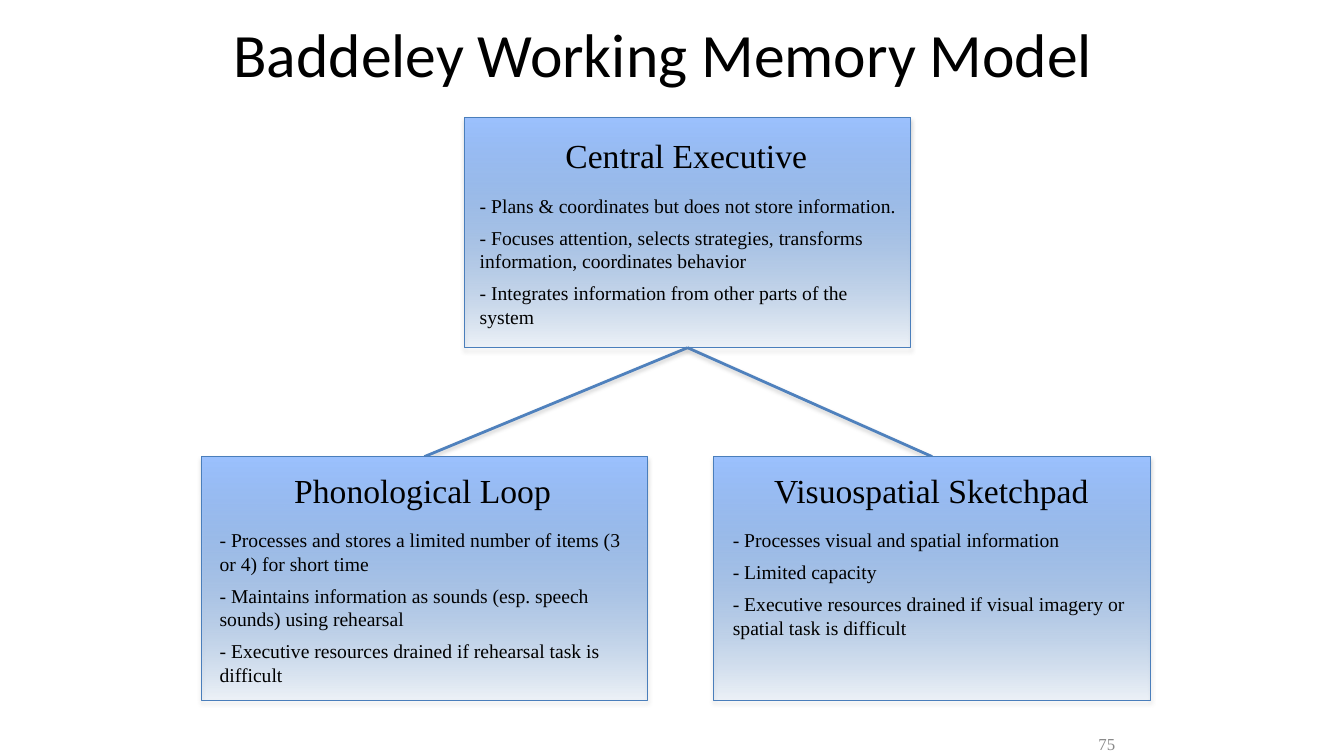
from lxml import etree
from pptx import Presentation
from pptx.dml.color import RGBColor
from pptx.enum import shapes, text
from pptx.oxml.ns import qn
from pptx.util import Inches, Pt

TITLE = "Baddeley Working Memory Model"
PAGE_NUMBER = "75"
COLORS = {"text": "000000", "page": "898989", "link": "4F81BD", "border": "4A7EBB",
          "top": "9BC1FF", "bottom": "3F80CD", "shadow": "808080"}
SERIF = "Times New Roman"

# Boxes are left, top, width, height in inches
COMPONENTS = [
    {"heading": "Phonological Loop", "box": (2, 4.53, 4.42, 2.42),
     "heading_box": (2.82, 4.61, 2.77, 0.5), "points_box": (2.08, 5.19, 4.33, 1.68),
     "points": ["Processes and stores a limited number of items (3 or 4) for short time",
                "Maintains information as sounds (esp. speech sounds) using rehearsal",
                "Executive resources drained if rehearsal task is difficult"]},
    {"heading": "Visuospatial Sketchpad", "box": (7.08, 4.53, 4.33, 2.42),
     "heading_box": (7.58, 4.61, 3.35, 0.5), "points_box": (7.17, 5.19, 4.17, 1.21),
     "points": ["Processes visual and spatial information",
                "Limited capacity",
                "Executive resources drained if visual imagery or spatial task is difficult"]},
    {"heading": "Central Executive", "box": (4.61, 1.17, 4.42, 2.28),
     "heading_box": (5.51, 1.29, 2.62, 0.51), "points_box": (4.66, 1.87, 4.33, 1.45),
     "points": ["Plans & coordinates but does not store information.",
                "Focuses attention, selects strategies, transforms information, "
                "coordinates behavior",
                "Integrates information from other parts of the system"]},
]


def color(name):
    return RGBColor.from_string(COLORS[name])


def inches(values):
    return [Inches(value) for value in values]


def add_alpha(color_element, percent):
    etree.SubElement(color_element, qn("a:alpha"), val=str(percent * 1000))


def add_shadow(shape, distance, percent):
    effects = etree.SubElement(shape.element.spPr, qn("a:effectLst"))
    shadow = etree.SubElement(effects, qn("a:outerShdw"), blurRad=str(Pt(3.1)),
                              dist=str(Pt(distance)), dir="5400000", rotWithShape="0")
    add_alpha(etree.SubElement(shadow, qn("a:srgbClr"), val=COLORS["shadow"]), percent)


def write(frame, lines, size, font=SERIF, fill="text", **paragraph_format):
    for index, line in enumerate(lines):
        paragraph = frame.paragraphs[0] if index == 0 else frame.add_paragraph()
        paragraph.text = line
        for name, value in paragraph_format.items():
            setattr(paragraph, name, value)
        for name, value in {"size": Pt(size), "name": font}.items():
            setattr(paragraph.font, name, value)
        paragraph.font.color.rgb = color(fill)


def add_text(parent, box, lines, size, wrap=True, **formats):
    frame = parent.add_textbox(*inches(box)).text_frame
    frame.word_wrap = wrap
    write(frame, lines, size, **formats)
    return frame


def add_component(slide, component):
    group = slide.shapes.add_group_shape().shapes
    panel = group.add_shape(shapes.MSO_SHAPE.RECTANGLE, *inches(component["box"]))
    panel.fill.gradient()
    panel.fill.gradient_angle = 270
    for stop, name in zip(panel.fill.gradient_stops, ("top", "bottom")):
        stop.color.rgb = color(name)
    stop_colors = panel.element.spPr.findall(".//" + qn("a:gs") + "/" + qn("a:srgbClr"))
    add_alpha(stop_colors[-1], 7)
    panel.line.color.rgb = color("border")
    panel.line.width = Pt(0.75)
    add_shadow(panel, 1.8, 35)
    add_text(group, component["heading_box"], [component["heading"]], 24, wrap=False)
    add_text(group, component["points_box"], ["- " + point for point in component["points"]],
             14, space_after=Pt(6))


def main():
    presentation = Presentation()
    presentation.slide_width, presentation.slide_height = inches((13.33, 7.5))
    slide = presentation.slides.add_slide(presentation.slide_layouts[5])

    # Links from the executive to its two stores
    *stores, executive = COMPONENTS
    left, top, width, height = executive["box"]
    start = (left + width / 2, top + height)
    for store in stores:
        left, top, width, height = store["box"]
        link = slide.shapes.add_connector(shapes.MSO_CONNECTOR.STRAIGHT,
                                          *inches(start + (left + width / 2, top)))
        link.line.color.rgb = color("link")
        link.line.width = Pt(2)
        add_shadow(link, 1.6, 38)

    # Title
    title = slide.shapes.title
    title.left, title.top, title.width, title.height = inches((2.08, 0.13, 9, 0.78))
    title.text_frame.vertical_anchor = text.MSO_ANCHOR.MIDDLE
    write(title.text_frame, [TITLE], 44, font="Calibri", alignment=text.PP_ALIGN.CENTER)

    # Page number
    number = add_text(slide.shapes, (8.83, 7.18, 2.33, 0.4), [PAGE_NUMBER], 12,
                      fill="page", alignment=text.PP_ALIGN.RIGHT)
    number.vertical_anchor = text.MSO_ANCHOR.MIDDLE

    # Memory components
    for component in COMPONENTS:
        add_component(slide, component)
    presentation.save("out.pptx")


if __name__ == "__main__":
    main()
